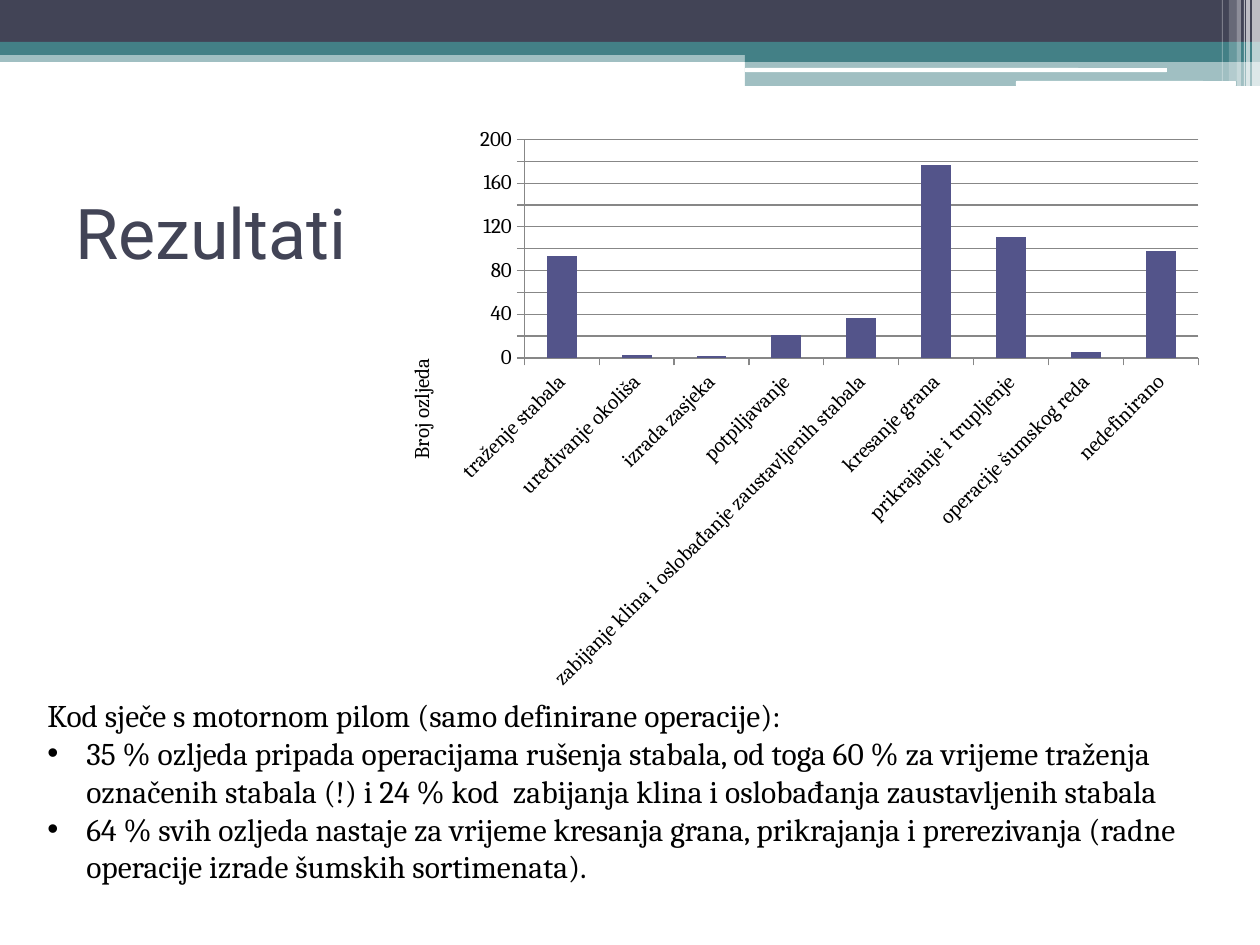
from lxml import etree
from pptx import Presentation
from pptx.chart.data import CategoryChartData
from pptx.dml.color import RGBColor
from pptx.enum.chart import XL_CHART_TYPE, XL_TICK_MARK
from pptx.enum.shapes import MSO_SHAPE
from pptx.enum.text import MSO_ANCHOR
from pptx.oxml.ns import qn
from pptx.util import Pt

PX = 914400 / 126
PAGE_W, PAGE_H = 1260, 945
BLANK_LAYOUT = 6

COLUMNS = XL_CHART_TYPE.COLUMN_CLUSTERED
OUTSIDE = XL_TICK_MARK.OUTSIDE
RECT, ROUND = MSO_SHAPE.RECTANGLE, MSO_SHAPE.ROUNDED_RECTANGLE
MIDDLE, TOP = MSO_ANCHOR.MIDDLE, MSO_ANCHOR.TOP

NAVY = RGBColor(0x42, 0x44, 0x56)
TEAL = RGBColor(0x43, 0x80, 0x86)
INDIGO = RGBColor(0x53, 0x54, 0x8A)
GREY = RGBColor(0x87, 0x87, 0x87)
BLACK = RGBColor(0, 0, 0)
WHITE = RGBColor(0xFF, 0xFF, 0xFF)

TITLE_FONT = {"name": "Roboto", "size": Pt(40), "color": NAVY}
BODY_FONT = {"name": "Cambria", "size": Pt(18), "color": BLACK}
CHART_FONT = {"name": "Cambria", "size": Pt(12), "bold": False, "color": BLACK}

# left, top, width, height, shape, colour, opacity in percent
BANDS = [
    (0, 50, 1260, 12, RECT, TEAL, 50),
    (0, 0, 1260, 42, RECT, NAVY, 100),
    (0, 42, 1260, 13, RECT, TEAL, 100),
    (745, 49, 515, 13, RECT, TEAL, 100),
    (745, 61, 515, 25, RECT, TEAL, 50),
    (745, 68, 422, 4, ROUND, WHITE, 100),
    (1016, 81, 220, 5, ROUND, WHITE, 100),
]
# left, width, height, opacity in percent
STRIPES = [
    (1252, 8, 86, 65),
    (1246, 4, 86, 65),
    (1244, 1, 86, 60),
    (1237, 4, 86, 40),
    (1229, 8, 81, 20),
    (1222, 1, 81, 30),
]

INJURIES = {
    "traženje stabala": 93,
    "uređivanje okoliša": 3,
    "izrada zasjeka": 2,
    "potpiljavanje": 21,
    "zabijanje klina i oslobađanje zaustavljenih stabala": 37,
    "kresanje grana": 177,
    "prikrajanje i trupljenje": 111,
    "operacije šumskog reda": 5,
    "nedefinirano": 98,
}

INTRO = "Kod sječe s motornom pilom (samo definirane operacije):"
FINDINGS = [
    "35 % ozljeda pripada operacijama rušenja stabala, od toga 60 % za vrijeme "
    "traženja označenih stabala (!) i 24 % kod  zabijanja klina i oslobađanja "
    "zaustavljenih stabala",
    "64 % svih ozljeda nastaje za vrijeme kresanja grana, prikrajanja i "
    "prerezivanja (radne operacije izrade šumskih sortimenata).",
]


def emu(*lengths):
    return [round(length * PX) for length in lengths]


def set_font(font, style):
    for name, value in style.items():
        if name == "color":
            font.color.rgb = value
        else:
            setattr(font, name, value)


def add_block(page, box, kind, color, opacity):
    """Add a plain filled shape without outline."""
    block = page.shapes.add_shape(kind, *emu(*box))
    block.shadow.inherit = False
    block.fill.solid()
    block.fill.fore_color.rgb = color
    block.line.fill.background()
    if opacity < 100:
        tint = block.fill._xPr.find(".//" + qn("a:srgbClr"))
        etree.SubElement(tint, qn("a:alpha"), val=str(opacity * 1000))


def add_header(page, box):
    left, top, _, _ = box
    for x, y, width, height, kind, color, opacity in BANDS:
        add_block(page, (left + x, top + y, width, height), kind, color, opacity)
    for x, width, height, opacity in STRIPES:
        add_block(page, (left + x, top, width, height), RECT, WHITE, opacity)


def add_text(page, box, lines, style, anchor):
    """Add a wrapping text box and return its paragraphs."""
    frame = page.shapes.add_textbox(*emu(*box)).text_frame
    frame.word_wrap = True
    frame.vertical_anchor = anchor
    frame.text = "\n".join(lines)
    for para in frame.paragraphs:
        for span in para.runs:
            set_font(span.font, style)
    return frame.paragraphs


def add_findings(page, box):
    paras = add_text(page, box, [INTRO, *FINDINGS], BODY_FONT, TOP)
    indent = emu(39)[0]
    for para in paras[1:]:
        props = para._p.get_or_add_pPr()
        props.set("marL", str(indent))
        props.set("indent", str(-indent))
        etree.SubElement(props, qn("a:buFont"), typeface="Arial")
        etree.SubElement(props, qn("a:buChar"), char="•")


def add_injury_chart(page, box):
    data = CategoryChartData()
    data.categories = list(INJURIES)
    data.add_series("Series 1", list(INJURIES.values()))
    chart = page.shapes.add_chart(COLUMNS, *emu(*box), data).chart
    chart.has_legend = False
    chart.has_title = False
    set_font(chart.font, CHART_FONT)

    plot = chart.plots[0]
    plot.gap_width = 150
    plot.vary_by_categories = False
    bars = plot.series[0].format.fill
    bars.solid()
    bars.fore_color.rgb = INDIGO

    names, counts = chart.category_axis, chart.value_axis
    counts.minimum_scale, counts.maximum_scale, counts.major_unit = 0, 200, 20
    counts.has_major_gridlines = True
    for axis in (names, counts):
        axis.major_tick_mark = OUTSIDE
        set_font(axis.tick_labels.font, CHART_FONT)
    for part in (names, counts, counts.major_gridlines):
        part.format.line.color.rgb = GREY
        part.format.line.width = Pt(0.75)

    title = counts.axis_title.text_frame
    title.text = "Broj ozljeda"
    set_font(title.paragraphs[0].runs[0].font, CHART_FONT)
    rotations = {
        "//c:catAx/c:txPr/a:bodyPr": -45,
        "//c:valAx/c:title//a:bodyPr": -90,
    }
    for query, degrees in rotations.items():
        for body in chart.element.xpath(query):
            body.set("rot", str(degrees * 60000))
            body.set("vert", "horz")


def main():
    deck = Presentation()
    deck.slide_width, deck.slide_height = emu(PAGE_W, PAGE_H)
    page = deck.slides.add_slide(deck.slide_layouts[BLANK_LAYOUT])
    add_header(page, (0, 0, PAGE_W, 86))
    add_text(page, (63, 158, 1134, 147), ["Rezultati"], TITLE_FONT, MIDDLE)
    add_injury_chart(page, (382, 116, 833, 586))
    add_findings(page, (35, 690, 1211, 280))
    deck.save("out.pptx")


if __name__ == "__main__":
    main()
